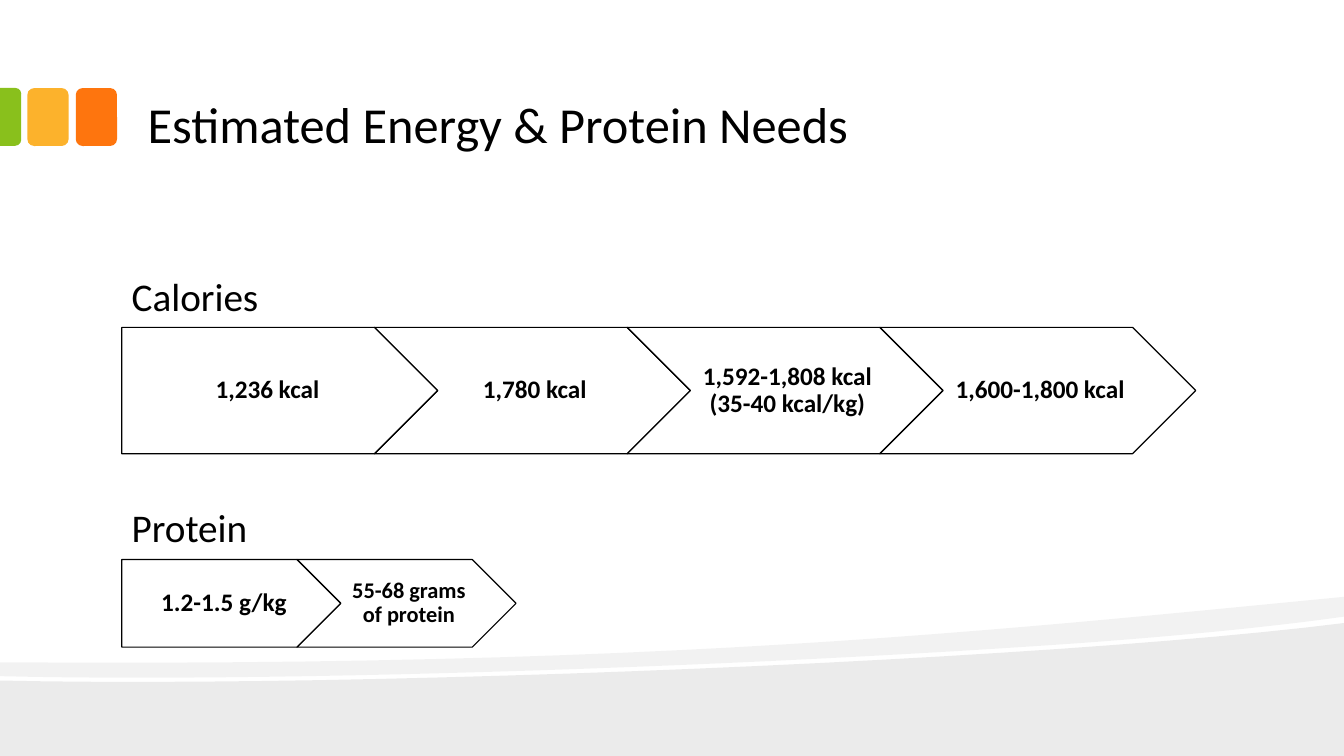
from lxml import etree
from pptx import Presentation
from pptx.dml.color import RGBColor
from pptx.enum.shapes import MSO_SHAPE
from pptx.enum.text import MSO_ANCHOR, MSO_AUTO_SIZE, PP_ALIGN
from pptx.oxml.ns import qn
from pptx.util import Cm, Pt

PENTAGON, CHEVRON = MSO_SHAPE.PENTAGON, MSO_SHAPE.CHEVRON
ROUNDED, ROUNDED_TOP = MSO_SHAPE.ROUNDED_RECTANGLE, MSO_SHAPE.ROUND_2_SAME_RECTANGLE
TOP, MIDDLE, BOTTOM = MSO_ANCHOR.TOP, MSO_ANCHOR.MIDDLE, MSO_ANCHOR.BOTTOM
LEFT, CENTER = PP_ALIGN.LEFT, PP_ALIGN.CENTER

FONT = "Calibri"
COLORS = {"ink": "000000", "green": "89C01C", "yellow": "FCB22C", "orange": "FE750E"}
SLIDE_WIDTH, SLIDE_HEIGHT = 33.87, 19.05
CURVE_STEPS = 24


def color(name):
    return RGBColor.from_string(COLORS[name])


def write_text(shape, text, size=18, bold=False, align=LEFT, anchor=TOP,
               insets=(0.25, 0.13, 0.25, 0.13), spacing=1.0):
    frame = shape.text_frame
    frame.word_wrap = True
    frame.auto_size = MSO_AUTO_SIZE.NONE
    frame.vertical_anchor = anchor
    (frame.margin_left, frame.margin_top,
     frame.margin_right, frame.margin_bottom) = map(Cm, insets)
    paragraph = frame.paragraphs[0]
    paragraph.alignment = align
    paragraph.line_spacing = spacing
    run = paragraph.add_run()
    run.text = text
    run.font.name = FONT
    run.font.size = Pt(size)
    run.font.bold = bold
    run.font.color.rgb = color("ink")


def add_filled_shape(slide, kind, box, fill):
    shape = slide.shapes.add_shape(kind, *map(Cm, box))
    shape.shadow.inherit = False
    shape.fill.solid()
    shape.fill.fore_color.rgb = color(fill)
    shape.line.fill.background()
    return shape


def curve(start, control_1, control_2, end):
    """Points along a cubic curve, both ends included."""
    points = []
    for step in range(CURVE_STEPS + 1):
        t = step / CURVE_STEPS
        weights = ((1 - t) ** 3, 3 * t * (1 - t) ** 2, 3 * t ** 2 * (1 - t), t ** 3)
        points.append(tuple(
            sum(weight * value for weight, value in zip(weights, axis))
            for axis in zip(start, control_1, control_2, end)))
    return points


def add_wave(slide, points, opacity):
    points = [(Cm(x), Cm(y)) for x, y in points]
    builder = slide.shapes.build_freeform(*points[0], scale=1.0)
    builder.add_line_segments(points[1:], close=True)
    shape = builder.convert_to_shape()
    shape.shadow.inherit = False
    shape.fill.solid()
    shape.fill.fore_color.rgb = color("ink")
    shape.line.fill.background()
    # Transparency
    rgb = shape.fill._xPr.find(qn("a:solidFill"))[0]
    etree.SubElement(rgb, qn("a:alpha"), val=str(opacity * 1000))


def add_background(slide):
    # Waves along the bottom edge
    lower = curve((0, 17.15), (8.94, 17.35), (26.47, 16.64), (SLIDE_WIDTH, 15.7))
    add_wave(slide, lower + [(SLIDE_WIDTH, SLIDE_HEIGHT), (0, SLIDE_HEIGHT)], opacity=8)
    upper = curve((0, 16.69), (16.56, 16.81), (24.66, 15.93), (SLIDE_WIDTH, 15.04))
    right = curve((SLIDE_WIDTH, 15.54), (31.88, 15.82), (29.18, 16.08), (26.14, 16.28))
    left = curve((26.14, 16.28), (17.73, 16.84), (6.55, 17.2), (0, 17.04))
    add_wave(slide, upper + right + left[1:], opacity=5)

    # Colour tabs beside the title
    add_filled_shape(slide, ROUNDED, (1.91, 2.22, 1.04, 1.46), "orange")
    add_filled_shape(slide, ROUNDED, (0.69, 2.22, 1.04, 1.46), "yellow")
    tab = add_filled_shape(slide, ROUNDED_TOP, (-0.46, 2.68, 1.46, 0.53), "green")
    tab.adjustments[0] = 0.29
    tab.rotation = 90


def add_title(slide, text):
    title = slide.shapes.title
    title.left, title.top, title.width, title.height = map(Cm, (3.38, 0.43, 27.08, 3.61))
    write_text(title, text, size=36, anchor=BOTTOM, insets=(0.34, 0.17, 0.34, 0.17))


def add_label(slide, text, top):
    box = slide.shapes.add_textbox(Cm(3.07), Cm(top), Cm(7.8), Cm(1.45))
    write_text(box, text, size=28)


def add_arrow_chain(slide, steps, top, width):
    """Arrows 0.4 as high as wide, each overlapping the next by a fifth."""
    for index, (text, size) in enumerate(steps):
        shape = slide.shapes.add_shape(
            CHEVRON if index else PENTAGON,
            Cm(3.07 + index * width * 0.8), Cm(top), Cm(width), Cm(width * 0.4))
        shape.shadow.inherit = False
        shape.fill.background()
        shape.line.color.rgb = color("ink")
        shape.line.width = Pt(0.85)
        write_text(shape, text, size=size, bold=True, align=CENTER, anchor=MIDDLE,
                   insets=(0.19 if index else 0.25, 0.13, 0.07, 0.13), spacing=0.9)


def main():
    presentation = Presentation()
    presentation.slide_width, presentation.slide_height = Cm(SLIDE_WIDTH), Cm(SLIDE_HEIGHT)
    slide = presentation.slides.add_slide(presentation.slide_layouts[5])

    add_background(slide)
    add_title(slide, "Estimated Energy & Protein Needs")

    # Calories
    add_arrow_chain(slide, [("1,236 kcal", 18), ("1,780 kcal", 18),
                            ("1,592-1,808 kcal (35-40 kcal/kg)", 18),
                            ("1,600-1,800 kcal", 18)], top=8.25, width=7.96)
    add_label(slide, "Calories", top=6.73)

    # Protein
    add_arrow_chain(slide, [("1.2-1.5 g/kg", 18), ("55-68 grams of protein", 16)],
                    top=14.1, width=5.52)
    add_label(slide, "Protein", top=12.55)

    presentation.save("out.pptx")


if __name__ == "__main__":
    main()
